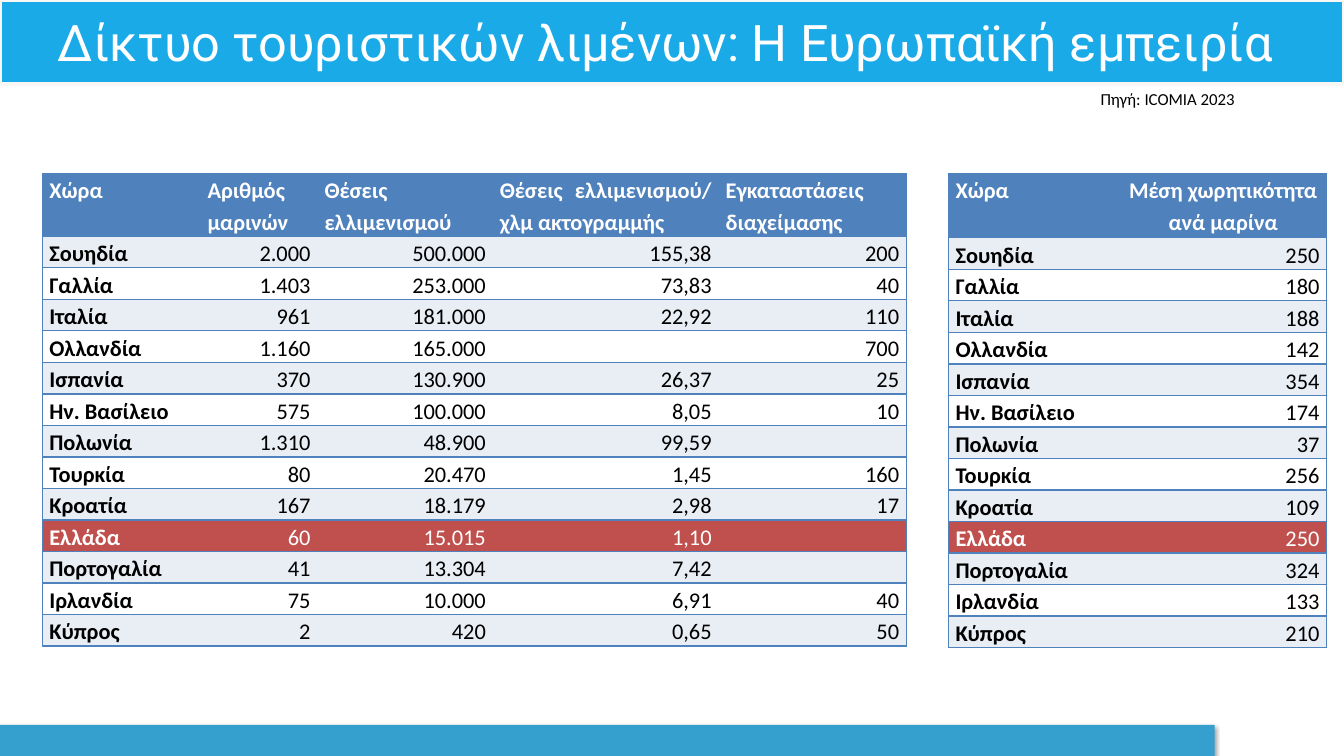
from lxml.etree import SubElement
from pptx import Presentation
from pptx.dml.color import RGBColor
from pptx.enum.shapes import MSO_SHAPE as Shape
from pptx.enum.text import MSO_ANCHOR as Anchor, MSO_AUTO_SIZE as AutoSize, PP_ALIGN as Align
from pptx.oxml import parse_xml
from pptx.oxml.ns import nsdecls, qn
from pptx.util import Inches, Pt

BLACK = RGBColor(0x00, 0x00, 0x00)
WHITE = RGBColor(0xFF, 0xFF, 0xFF)
HEADER_BLUE = RGBColor(0x4F, 0x81, 0xBD)
BAND = RGBColor(0xE9, 0xED, 0xF4)
HIGHLIGHT = RGBColor(0xC0, 0x50, 0x4D)
BANNER = RGBColor(0x1B, 0xAA, 0xE8)
BANNER_EDGE = RGBColor(0xF8, 0xF7, 0xF3)
FOOTER_BLUE = RGBColor(0x35, 0xA0, 0xCD)

PLAIN_TABLE = "{2D5ABB26-0587-4C30-8999-92F81FD0307C}"
GRID_COLUMNS, GRID_ROWS = 160, 90
ROW_HEIGHT = 3.75
HOME = "Ελλάδα"

MARINA_HEADER = ["Χώρα", "Αριθμός μαρινών", "Θέσεις ελλιμενισμού",
                 "Θέσεις ελλιμενισμού/ χλμ ακτογραμμής", "Εγκαταστάσεις διαχείμασης"]
CAPACITY_HEADER = ["Χώρα", "Μέση χωρητικότητα ανά μαρίνα"]
# Country, marinas, berths, berths per km, winter storage, mean capacity
COUNTRIES = [
    ("Σουηδία", "2.000", "500.000", "155,38", "200", "250"),
    ("Γαλλία", "1.403", "253.000", "73,83", "40", "180"),
    ("Ιταλία", "961", "181.000", "22,92", "110", "188"),
    ("Ολλανδία", "1.160", "165.000", "", "700", "142"),
    ("Ισπανία", "370", "130.900", "26,37", "25", "354"),
    ("Ην. Βασίλειο", "575", "100.000", "8,05", "10", "174"),
    ("Πολωνία", "1.310", "48.900", "99,59", "", "37"),
    ("Τουρκία", "80", "20.470", "1,45", "160", "256"),
    ("Κροατία", "167", "18.179", "2,98", "17", "109"),
    (HOME, "60", "15.015", "1,10", "", "250"),
    ("Πορτογαλία", "41", "13.304", "7,42", "", "324"),
    ("Ιρλανδία", "75", "10.000", "6,91", "40", "133"),
    ("Κύπρος", "2", "420", "0,65", "50", "210"),
]


def assign(target, values):
    for name, value in values.items():
        setattr(target, name, value)


class MarinaSlide:
    """Places elements in columns and rows of a 160 by 90 grid."""

    cell_margins = dict(margin_left=Inches(0.07), margin_right=Inches(0.07),
                        margin_top=0, margin_bottom=0)
    cell_spacing = dict(line_spacing=1.15, space_after=Pt(10))

    def __init__(self, deck):
        self.slide = deck.slides.add_slide(deck.slide_layouts[5])
        self.column = deck.slide_width / GRID_COLUMNS
        self.row = deck.slide_height / GRID_ROWS

    def place(self, left, top, width, height):
        return [round(left * self.column), round(top * self.row),
                round(width * self.column), round(height * self.row)]

    def add_text(self, paragraph, text, color, size, font="Calibri", bold=False):
        run = paragraph.add_run()
        run.text = text
        assign(run.font, dict(name=font, size=Pt(size), bold=bold))
        run.font.color.rgb = color

    def title(self, text, *box):
        """Turn the title placeholder into a rounded banner."""
        banner = self.slide.shapes.title
        assign(banner, dict(zip(("left", "top", "width", "height"), self.place(*box))))
        banner.element.spPr.append(parse_xml(
            f'<a:prstGeom {nsdecls("a")} prst="roundRect"><a:avLst/></a:prstGeom>'))
        banner.fill.solid()
        banner.fill.fore_color.rgb = BANNER
        banner.line.color.rgb = BANNER_EDGE
        banner.line.width = Pt(3)
        assign(banner.text_frame, dict(vertical_anchor=Anchor.MIDDLE, word_wrap=True,
                                       auto_size=AutoSize.NONE))
        paragraph = banner.text_frame.paragraphs[0]
        paragraph.alignment = Align.CENTER
        self.add_text(paragraph, text, WHITE, 36, "Roboto")

    def footer_bar(self, *box):
        bar = self.slide.shapes.add_shape(Shape.RECTANGLE, *self.place(*box))
        bar.fill.solid()
        bar.fill.fore_color.rgb = FOOTER_BLUE
        bar.line.fill.background()
        bar.element.spPr.append(parse_xml(
            f'<a:effectLst {nsdecls("a")}><a:outerShdw blurRad="40000" dist="23000" '
            'dir="5400000" rotWithShape="0"><a:srgbClr val="000000">'
            '<a:alpha val="35000"/></a:srgbClr></a:outerShdw></a:effectLst>'))

    def note(self, text, *box):
        frame = self.slide.shapes.add_textbox(*self.place(*box)).text_frame
        frame.word_wrap = True
        self.add_text(frame.paragraphs[0], text, BLACK, 12)

    def border(self, cell, sides):
        properties = cell._tc.get_or_add_tcPr()
        for side in "LRTB":
            line = SubElement(properties, qn(f"a:ln{side}"), w=str(Pt(1)))
            if side in sides:
                fill = SubElement(line, qn("a:solidFill"))
                SubElement(fill, qn("a:srgbClr"), val=str(HEADER_BLUE))
            else:
                SubElement(line, qn("a:noFill"))

    def fill_cell(self, cell, text, fill, color, bold, align):
        assign(cell, self.cell_margins)
        cell.fill.solid()
        cell.fill.fore_color.rgb = fill
        if text:
            paragraph = cell.text_frame.paragraphs[0]
            assign(paragraph, dict(self.cell_spacing, alignment=align))
            self.add_text(paragraph, text, color, 16, bold=bold)

    def table(self, left, top, widths, header_height, header, records, header_align):
        heights = [header_height] + [ROW_HEIGHT] * len(records)
        table = self.slide.shapes.add_table(
            len(heights), len(widths),
            *self.place(left, top, sum(widths), sum(heights))).table
        assign(table, dict(first_row=False, horz_banding=False))
        table._tbl.tblPr.find(qn("a:tableStyleId")).text = PLAIN_TABLE
        for column, width in zip(table.columns, widths):
            column.width = round(width * self.column)
        for row, height in zip(table.rows, heights):
            row.height = round(height * self.row)

        last = len(widths) - 1
        for r, record in enumerate([header, *records]):
            if r == 0:
                fill, color = HEADER_BLUE, WHITE
            elif record[0] == HOME:
                fill, color = HIGHLIGHT, WHITE
            else:
                fill, color = (BAND if r % 2 else WHITE), BLACK
            for c, text in enumerate(record):
                cell = table.cell(r, c)
                self.border(cell, "TB" + "L" * (c == 0) + "R" * (c == last))
                if c == 0:
                    align = Align.JUSTIFY
                else:
                    align = Align.RIGHT if r else header_align
                self.fill_cell(cell, text, fill, color, r == 0 or c == 0, align)


def main():
    deck = Presentation()
    deck.slide_width, deck.slide_height = Inches(13.33), Inches(7.5)
    page = MarinaSlide(deck)
    page.footer_bar(0, 86.28, 144.6, 3.72)
    page.table(112.92, 20.64, [20.4, 24.6], 7.68, CAPACITY_HEADER,
               [(country[0], country[-1]) for country in COUNTRIES], Align.CENTER)
    page.table(5.04, 20.64, [18.84, 13.92, 20.88, 26.88, 22.32], 7.5, MARINA_HEADER,
               [country[:-1] for country in COUNTRIES], Align.JUSTIFY)
    page.note("Πηγή: ICOMIA 2023", 129.84, 9.96, 30.16, 3.6)
    page.title("Δίκτυο τουριστικών λιμένων: Η Ευρωπαϊκή εμπειρία ", 0, 0, 160, 9.96)
    deck.save("out.pptx")


if __name__ == "__main__":
    main()
